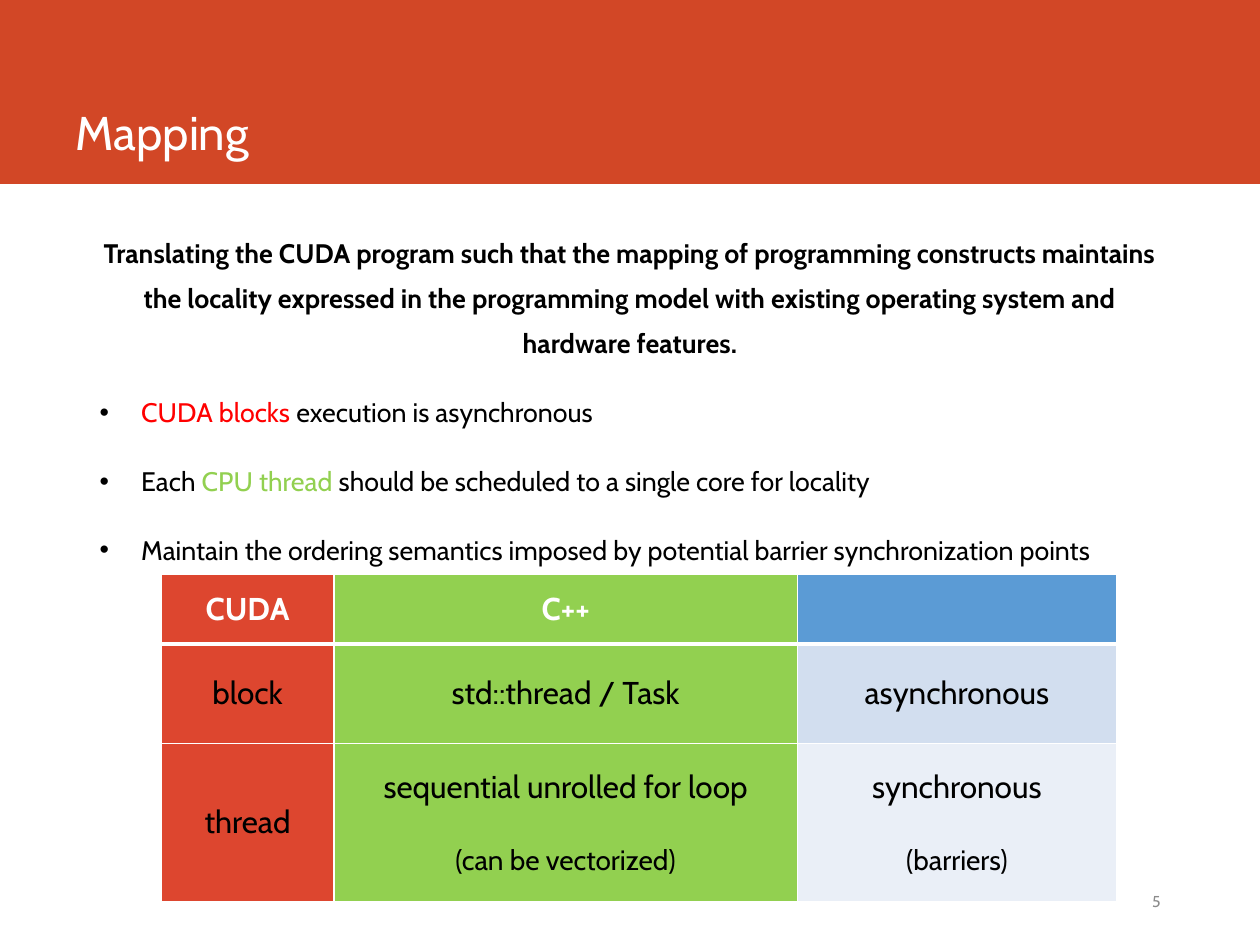
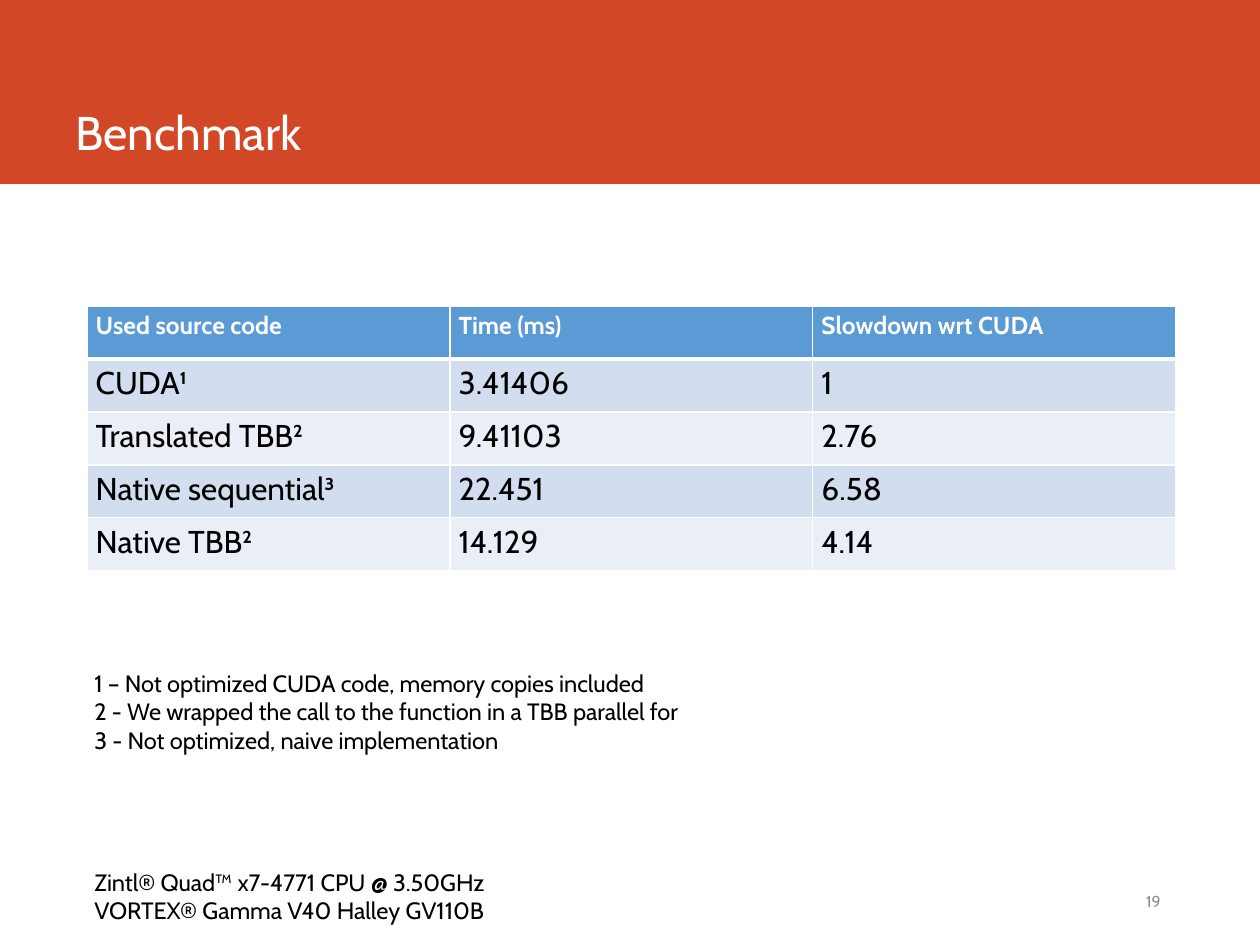
from lxml.etree import SubElement as Sub
from pptx import Presentation
from pptx.dml.color import RGBColor
from pptx.enum.shapes import MSO_SHAPE as Shape
from pptx.enum.text import MSO_ANCHOR as Anchor, MSO_AUTO_SIZE as Fit, PP_ALIGN as Align
from pptx.oxml.ns import qn
from pptx.util import Inches, Pt

FONT = "Cabin"
WHITE, BLACK, GRAY = "FFFFFF", "000000", "8C8C8C"
BAND, RED, BRICK, GREEN = "D24726", "FF0000", "DD462F", "92D050"
BLUE, PALE, LIGHT = "5B9BD5", "D2DEEF", "EAEFF7"


def paint(fill, color):
    fill.solid()
    fill.fore_color.rgb = RGBColor.from_string(color)


def write(para, text, size=18, color=BLACK, bold=False, align=Align.LEFT,
          line=None, before=0, after=0):
    para.alignment = align
    para.line_spacing = line
    para.space_before, para.space_after = Pt(before), Pt(after)
    runs = [(text, color)] if isinstance(text, str) else text
    for words, tint in runs:
        run = para.add_run()
        run.text = words
        font = run.font
        font.name, font.size, font.bold = FONT, Pt(size), bold
        paint(font.fill, tint)


def next_para(frame, index):
    return frame.add_paragraph() if index else frame.paragraphs[0]


def place(shape, *box):
    shape.left, shape.top, shape.width, shape.height = map(Inches, box)


def add_box(slide, *box):
    frame = slide.shapes.add_textbox(*map(Inches, box)).text_frame
    frame.word_wrap = True
    return frame


def add_band(deck, slide):
    band = slide.shapes.add_shape(Shape.RECTANGLE, 0, 0, Inches(10), Inches(1.46))
    band.shadow.inherit = False
    band.line.fill.background()
    paint(band.fill, BAND)
    band.element.nvSpPr.cNvPr.set("id", "20")
    deck.slide_master.shapes.element.insert(2, band.element)


def add_slide(deck, layout, title, number):
    slide = deck.slides.add_slide(deck.slide_layouts[layout])
    head = slide.shapes.title
    place(head, 0.5, 0, 8.82, 1.32)
    frame = head.text_frame
    frame.auto_size = Fit.NONE
    frame.vertical_anchor = Anchor.BOTTOM
    write(frame.paragraphs[0], title, size=27, color=WHITE)
    foot = add_box(slide, 6.62, 6.95, 2.69, 0.4)
    foot.vertical_anchor = Anchor.MIDDLE
    write(foot.paragraphs[0], number, size=9, color=GRAY, align=Align.RIGHT)
    return slide


def set_bullet(para, shown):
    props = para._p.get_or_add_pPr()
    indent = Inches(0.33) if shown else 0
    props.set("marL", str(indent))
    props.set("indent", str(-indent))
    if not shown:
        Sub(props, qn("a:buNone"))
        return
    Sub(Sub(props, qn("a:buClr")), qn("a:srgbClr"), val=BLACK)
    Sub(props, qn("a:buFont"), typeface="Arial")
    Sub(props, qn("a:buChar"), char="•")


def add_list(slide, lead, items):
    body = slide.placeholders[1]
    place(body, 0.69, 1.73, 8.62, 2.93)
    frame = body.text_frame
    frame.auto_size = Fit.NONE
    for i, text in enumerate([lead, *items]):
        para = next_para(frame, i)
        write(para, text, size=15.3, bold=i == 0, line=1.4, before=4.6, after=9,
              align=Align.LEFT if i else Align.CENTER)
        set_bullet(para, i > 0)


def set_edges(cell, row):
    props = cell._tc.get_or_add_tcPr()
    for side in "LRTB":
        thick = (row, side) in ((0, "B"), (1, "T"))
        edge = Sub(props, qn("a:ln" + side), w=str(Pt(3 if thick else 1)))
        Sub(Sub(edge, qn("a:solidFill")), qn("a:srgbClr"), val=WHITE)


def add_grid(slide, spot, widths, heights, rows, fills, head=18,
             inset=(0.1, 0.05), anchor=Anchor.TOP, align=Align.LEFT):
    size = sum(widths), sum(heights)
    grid = slide.shapes.add_table(len(rows), len(widths),
                                  *map(Inches, (*spot, *size))).table
    for col, width in zip(grid.columns, widths):
        col.width = Inches(width)
    for r, (height, texts) in enumerate(zip(heights, rows)):
        grid.rows[r].height = Inches(height)
        for c, text in enumerate(texts):
            cell = grid.cell(r, c)
            set_edges(cell, r)
            paint(cell.fill, fills[r][c])
            cell.margin_left = cell.margin_right = Inches(inset[0])
            cell.margin_top = cell.margin_bottom = Inches(inset[1])
            cell.vertical_anchor = anchor
            for i, part in enumerate(text.split("\n") if text else []):
                write(next_para(cell.text_frame, i), part, align=align,
                      size=16 if i else 18 if r else head, bold=r == 0,
                      color=BLACK if r else WHITE, before=21 if i else 0)


def add_notes(slide, groups):
    frame = add_box(slide, 0.65, 5.26, 8.43, 2.15)
    lines = [(text, g > 0 and i == 0)
             for g, group in enumerate(groups) for i, text in enumerate(group)]
    for i, (text, gap) in enumerate(lines):
        write(next_para(frame, i), text, size=13.5, before=65 if gap else 0)


def draw_mapping(slide):
    add_list(
        slide,
        "Translating the CUDA program such that the mapping of programming "
        "constructs maintains the locality expressed in the programming model "
        "with existing operating system and hardware features.",
        [[("CUDA blocks ", RED), ("execution is asynchronous", BLACK)],
         [("Each ", BLACK), ("CPU thread", GREEN),
          (" should be scheduled to a single core for locality", BLACK)],
         "Maintain the ordering semantics imposed by potential barrier "
         "synchronization points"])
    rows = [("CUDA", "C++", ""),
            ("block", "std::thread / Task", "asynchronous"),
            ("thread", "sequential unrolled for loop\n(can be vectorized)",
             "synchronous\n(barriers)")]
    fills = [(BRICK, GREEN, last) for last in (BLUE, PALE, LIGHT)]
    add_grid(slide, (1.28, 4.56), (1.37, 3.68, 2.53), (0.55, 0.79, 1.26),
             rows, fills, anchor=Anchor.MIDDLE, align=Align.CENTER)


def draw_bench(slide):
    rows = [("Used source code", "Time (ms)", "Slowdown wrt CUDA"),
            ("CUDA¹", "3.41406", "1"),
            ("Translated TBB²", "9.41103", "2.76"),
            ("Native sequential³", "22.451", "6.58"),
            ("Native TBB²", "14.129", "4.14")]
    fills = [[tint] * 3 for tint in (BLUE, PALE, LIGHT, PALE, LIGHT)]
    add_grid(slide, (0.69, 2.43), [2.88] * 3, [0.42] * 5, rows, fills,
             head=14, inset=(0.07, 0.04))
    add_notes(slide, [
        ("1 – Not optimized CUDA code, memory copies included",
         "2 - We wrapped the call to the function in a TBB parallel for",
         "3 - Not optimized, naive implementation"),
        ("Zintl® Quad™ x7-4771 CPU @ 3.50GHz",
         "VORTEX® Gamma V40 Halley GV110B")])


def main():
    deck = Presentation()
    deck.slide_width, deck.slide_height = Inches(10), Inches(7.5)
    first = add_slide(deck, 1, "Mapping", "5")
    add_band(deck, first)
    draw_mapping(first)
    draw_bench(add_slide(deck, 5, "Benchmark", "19"))
    deck.save("out.pptx")


if __name__ == "__main__":
    main()
